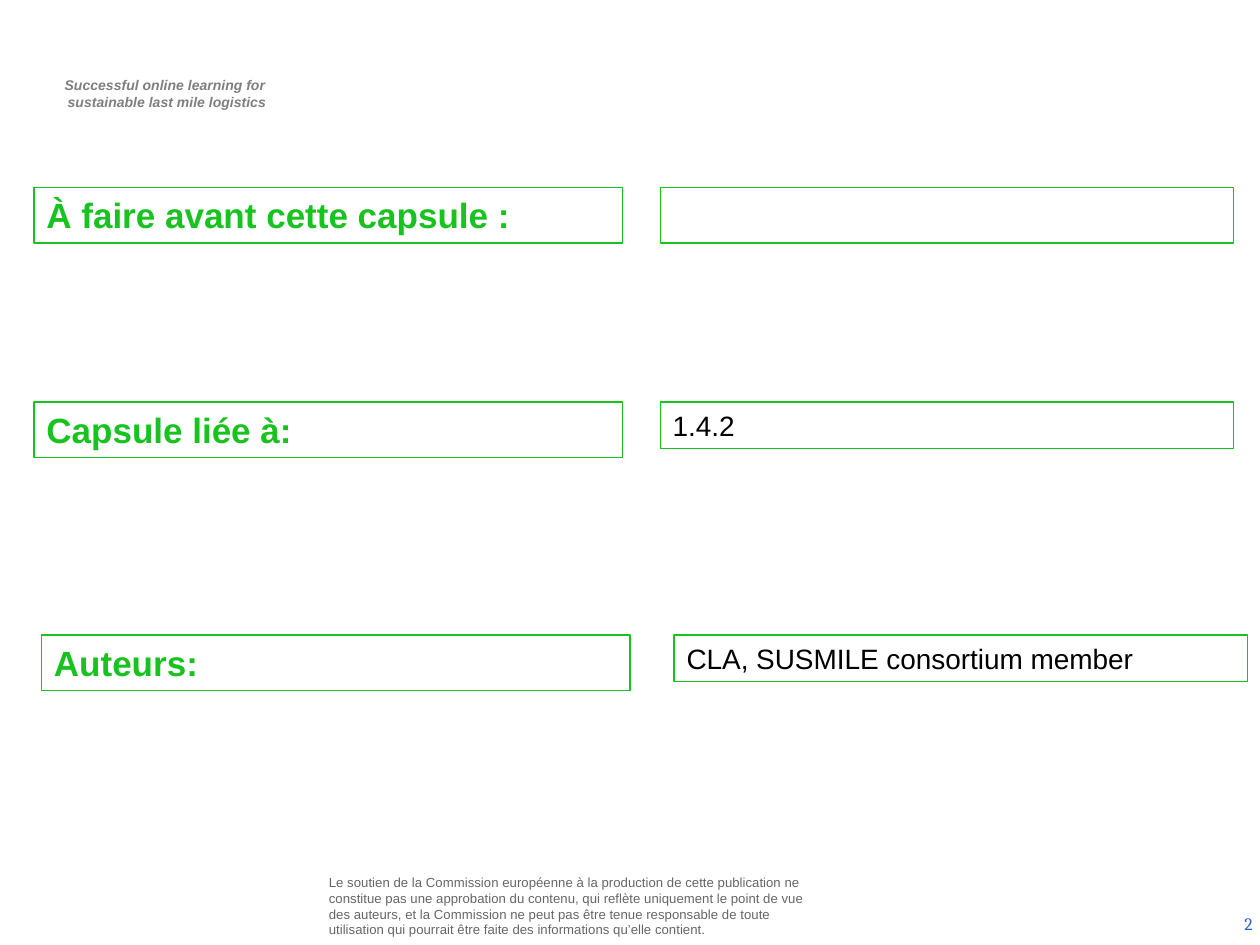
from pptx import Presentation
from pptx.dml.color import RGBColor
from pptx.enum.shapes import MSO_SHAPE
from pptx.enum.text import MSO_ANCHOR, PP_ALIGN
from pptx.util import Inches, Pt

GREEN = RGBColor(0x18, 0xC3, 0x20)
WHITE = RGBColor(0xFF, 0xFF, 0xFF)
BLACK = RGBColor(0x00, 0x00, 0x00)
GREY = RGBColor(0x7F, 0x7F, 0x7F)
DARK = RGBColor(0x66, 0x66, 0x66)
BLUE = RGBColor(0x33, 0x66, 0xCC)

NOTICE = (
    "Le soutien de la Commission européenne à la production de cette "
    "publication ne constitue pas une approbation du contenu, qui reflète "
    "uniquement le point de vue des auteurs, et la Commission ne peut pas "
    "être tenue responsable de toute utilisation qui pourrait être faite "
    "des informations qu’elle contient."
)

# top, left of label, label, left of value, value, height of value
ROWS = [
    (1.49, 0.27, "À faire avant cette capsule :", 5.24, "", 0.44),
    (3.19, 0.27, "Capsule liée à:", 5.24, "1.4.2", 0.37),
    (5.04, 0.33, "Auteurs:", 5.35, "CLA, SUSMILE consortium member", 0.37),
]


def write(shape, *lines, size, color, font="Arial", bold=False, italic=False,
          align=PP_ALIGN.LEFT, anchor=MSO_ANCHOR.TOP, inset=(0.1, 0.05, 0.1, 0.05)):
    """Fill the shape with one paragraph per line; inset is left, top, right, bottom."""
    frame = shape.text_frame
    frame.word_wrap = True
    frame.vertical_anchor = anchor
    (frame.margin_left, frame.margin_top,
     frame.margin_right, frame.margin_bottom) = map(Inches, inset)
    for i, line in enumerate(lines):
        para = frame.paragraphs[0] if i == 0 else frame.add_paragraph()
        para.alignment = align
        run = para.add_run()
        run.text = line
        style = run.font
        style.name, style.size = font, Pt(size)
        style.bold, style.italic = bold, italic
        style.color.rgb = color


class Page:
    def __init__(self, slide, line=GREEN, fill=WHITE):
        self.slide, self.line, self.fill = slide, line, fill

    def text(self, box, *lines, **style):
        shape = self.slide.shapes.add_textbox(*map(Inches, box))
        write(shape, *lines, **style)

    def frame(self, box, text, **style):
        shape = self.slide.shapes.add_shape(MSO_SHAPE.RECTANGLE, *map(Inches, box))
        shape.shadow.inherit = False
        shape.fill.solid()
        shape.fill.fore_color.rgb = self.fill
        shape.line.color.rgb = self.line
        shape.line.width = Pt(0.75)
        if text:
            write(shape, text, **style)


def main():
    deck = Presentation()
    deck.slide_width, deck.slide_height = Inches(10), Inches(7.5)
    page = Page(deck.slides.add_slide(deck.slide_layouts[6]))

    page.text((0.29, 0.56, 2.03, 0.37), "Successful online learning for ",
              "sustainable last mile logistics", size=8, color=GREY, bold=True,
              italic=True, align=PP_ALIGN.CENTER, inset=(0.14, 0.05, 0.1, 0.05))
    page.text((2.57, 7, 4.02, 0.5), NOTICE, size=7.5, color=DARK,
              anchor=MSO_ANCHOR.MIDDLE, inset=(0.04, 0.04, 0.04, 0.16))
    page.text((7.71, 7.13, 2.33, 0.4), "2", size=10, color=BLUE, font="Cambria",
              align=PP_ALIGN.RIGHT, anchor=MSO_ANCHOR.MIDDLE)

    for top, left, label, right, value, high in ROWS:
        page.frame((left, top, 4.67, 0.44), label, size=20, color=GREEN, bold=True)
        page.frame((right, top, 4.55, high), value, size=16, color=BLACK)

    deck.save("out.pptx")


if __name__ == "__main__":
    main()
